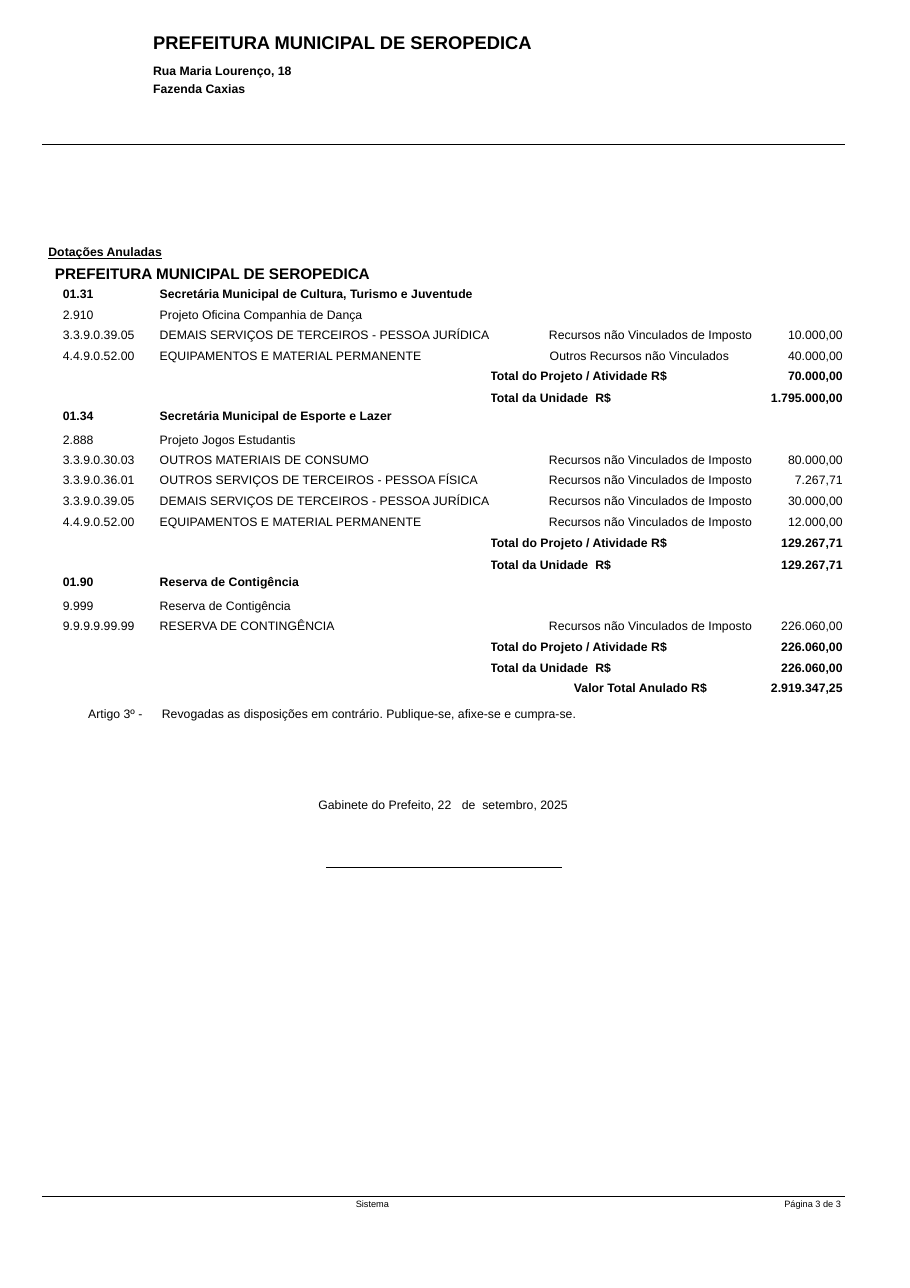
from pptx import Presentation
from pptx.dml.color import RGBColor
from pptx.enum.shapes import MSO_CONNECTOR
from pptx.enum.text import PP_ALIGN
from pptx.oxml.ns import qn
from pptx.util import Inches, Pt
from lxml import etree

STRAIGHT = MSO_CONNECTOR.STRAIGHT
LEFT = PP_ALIGN.LEFT
RIGHT = PP_ALIGN.RIGHT

FONT = "Arial"
BLACK = "000000"
BODY = 8
FOOTER = 6

IMPOSTO = "Recursos não Vinculados de Imposto"
OUTROS = "Outros Recursos não Vinculados"
TOTAL_PROJETO = "Total do Projeto / Atividade R$"
TOTAL_UNIDADE = [("Total da Unidade", 0), (" ", 2.2), ("R$", 0)]
PESSOA_JURIDICA = "DEMAIS SERVIÇOS DE TERCEIROS - PESSOA JURÍDICA"
EQUIPAMENTOS = "EQUIPAMENTOS E MATERIAL PERMANENTE"

BUDGET_LINES = [
    ("unit", "01.31", "Secretária Municipal de Cultura, Turismo e Juventude", "", ""),
    ("project", "2.910", "Projeto Oficina Companhia de Dança", "", ""),
    ("item", "3.3.9.0.39.05", PESSOA_JURIDICA, IMPOSTO, "10.000,00"),
    ("item", "4.4.9.0.52.00", EQUIPAMENTOS, OUTROS, "40.000,00"),
    ("total", "", "", TOTAL_PROJETO, "70.000,00"),
    ("closing", "01.34", "Secretária Municipal de Esporte e Lazer", TOTAL_UNIDADE, "1.795.000,00"),
    ("project", "2.888", "Projeto Jogos Estudantis", "", ""),
    ("item", "3.3.9.0.30.03", "OUTROS MATERIAIS DE CONSUMO", IMPOSTO, "80.000,00"),
    ("item", "3.3.9.0.36.01", "OUTROS SERVIÇOS DE TERCEIROS - PESSOA FÍSICA", IMPOSTO, "7.267,71"),
    ("item", "3.3.9.0.39.05", PESSOA_JURIDICA, IMPOSTO, "30.000,00"),
    ("item", "4.4.9.0.52.00", EQUIPAMENTOS, IMPOSTO, "12.000,00"),
    ("total", "", "", TOTAL_PROJETO, "129.267,71"),
    ("closing", "01.90", "Reserva de Contigência", TOTAL_UNIDADE, "129.267,71"),
    ("project", "9.999", "Reserva de Contigência", "", ""),
    ("item", "9.9.9.9.99.99", "RESERVA DE CONTINGÊNCIA", IMPOSTO, "226.060,00"),
    ("total", "", "", TOTAL_PROJETO, "226.060,00"),
    ("closing", "", "", TOTAL_UNIDADE, "226.060,00"),
    ("grand", "", "", "Valor Total Anulado R$", "2.919.347,25"),
]
TOP_INSETS = {"unit": 0, "project": 0.03, "item": 0.02, "total": 0.02,
              "closing": 0.03, "grand": 0.02}
NEXT_UNIT_INSET = 0.19
COLUMN_WIDTHS = [0.8, 3.11, 2.47, 0.77]
LEFT_INSETS = [0.03, 0.11, 0, 0]
RIGHT_INSETS = [0, 0, 0.09, 0.04]
TABLE_HEIGHT, FIRST_ROW, LAST_ROW = 3.71, 0.16, 0.15
PITCH = (TABLE_HEIGHT - FIRST_ROW - LAST_ROW) / 18


def color(value):
    return RGBColor.from_string(value)


def write(paragraph, text, size=BODY, bold=False, underline=False):
    if isinstance(text, str):
        paragraph.text = text
    else:
        for piece, spacing in text:
            run = paragraph.add_run()
            run.text = piece
            run.font._element.set("spc", str(round(spacing * 100)))
    for run in paragraph.runs:
        font = run.font
        font.name = FONT
        font.size = Pt(size)
        font.bold = bold
        font.underline = underline
        font.color.rgb = color(BLACK)


def add_text(slide, left, top, width, height, text, size=BODY,
             bold=False, underline=False, inset=0.01):
    frame = slide.shapes.add_textbox(
        Inches(left), Inches(top), Inches(width), Inches(height)).text_frame
    frame.word_wrap = True
    frame.margin_left = Inches(0.01)
    frame.margin_right = frame.margin_bottom = 0
    frame.margin_top = Inches(inset)
    write(frame.paragraphs[0], text, size, bold, underline)
    return frame


def add_rule(slide, left, right, y):
    rule = slide.shapes.add_connector(
        STRAIGHT, Inches(left), Inches(y), Inches(right), Inches(y))
    rule.line.color.rgb = color(BLACK)
    rule.line.width = Pt(0.75)
    etree.SubElement(rule._element.spPr, qn("a:effectLst"))


def row_height(index, kind, code):
    if index == 0:
        return FIRST_ROW
    if kind == "grand":
        return LAST_ROW
    return PITCH * (2 if kind == "closing" and code else 1)


def fill_cell(cell, column, kind, text):
    left = LEFT_INSETS[column]
    top = TOP_INSETS[kind]
    align = RIGHT if column == 3 or text == IMPOSTO else LEFT
    if text == OUTROS:
        left = 0.54
    if kind == "grand" and column == 2:
        left = 0.76
    if kind == "closing" and column < 2 and text:
        top = NEXT_UNIT_INSET
    cell.fill.background()
    cell.margin_left = Inches(left)
    cell.margin_right = Inches(RIGHT_INSETS[column])
    cell.margin_top = Inches(top)
    cell.margin_bottom = 0
    paragraph = cell.text_frame.paragraphs[0]
    if text:
        write(paragraph, text, bold=kind not in ("project", "item"))
        paragraph.alignment = align
    else:
        ending = etree.SubElement(paragraph._p, qn("a:endParaRPr"))
        ending.set("sz", str(BODY * 100))


def add_budget_table(slide):
    table = slide.shapes.add_table(
        len(BUDGET_LINES), len(COLUMN_WIDTHS), Inches(0.54), Inches(2.61),
        Inches(sum(COLUMN_WIDTHS)), Inches(TABLE_HEIGHT)).table
    table.first_row = False
    table.horz_banding = False
    for column, width in zip(table.columns, COLUMN_WIDTHS):
        column.width = Inches(width)
    for index, (kind, *texts) in enumerate(BUDGET_LINES):
        table.rows[index].height = Inches(row_height(index, kind, texts[0]))
        for column, text in enumerate(texts):
            fill_cell(table.cell(index, column), column, kind, text)
    table.cell(0, 2).merge(table.cell(1, 3))


def add_letterhead(slide):
    letterhead = add_text(slide, 1.38, 0.26, 3.49, 0.62,
                          "PREFEITURA MUNICIPAL DE SEROPEDICA", 12, True, inset=0.02)
    for line, space in (("Rua Maria Lourenço, 18", 4.5), ("Fazenda Caxias", 0)):
        address = letterhead.add_paragraph()
        write(address, line, bold=True)
        address.line_spacing = 1.25
        address.space_before = Pt(space)
    add_rule(slide, 0.38, 7.67, 1.31)


def add_section_heading(slide):
    heading = add_text(slide, 0.43, 2.17, 2.97, 0.41, "Dotações Anuladas",
                       bold=True, underline=True, inset=0.05)
    entity = heading.add_paragraph()
    write(entity, "PREFEITURA MUNICIPAL DE SEROPEDICA", 10, True)
    entity.space_before = Pt(3.4)
    entity._p.get_or_add_pPr().set("marL", str(Inches(0.06)))


def main():
    deck = Presentation()
    deck.slide_width = Inches(8.26)
    deck.slide_height = Inches(11.69)
    slide = deck.slides.add_slide(deck.slide_layouts[6])
    add_letterhead(slide)
    add_section_heading(slide)
    add_budget_table(slide)
    add_text(slide, 0.79, 6.4, 0.52, 0.16, "Artigo 3º -")
    add_text(slide, 1.46, 6.4, 3.78, 0.16,
             "Revogadas as disposições em contrário. Publique-se, afixe-se e cumpra-se.")
    add_text(slide, 2.88, 7.23, 2.28, 0.16,
             [("Gabinete do Prefeito, 22", 0), (" ", 4.4), ("de", 0),
              (" ", 2.2), ("setembro, 2025", 0)])
    add_rule(slide, 2.96, 5.1, 7.87)
    add_rule(slide, 0.38, 7.67, 10.86)
    add_text(slide, 3.22, 10.87, 0.33, 0.12, "Sistema", FOOTER)
    add_text(slide, 7.11, 10.87, 0.54, 0.12, "Página 3 de 3", FOOTER)
    deck.save("out.pptx")


if __name__ == "__main__":
    main()
